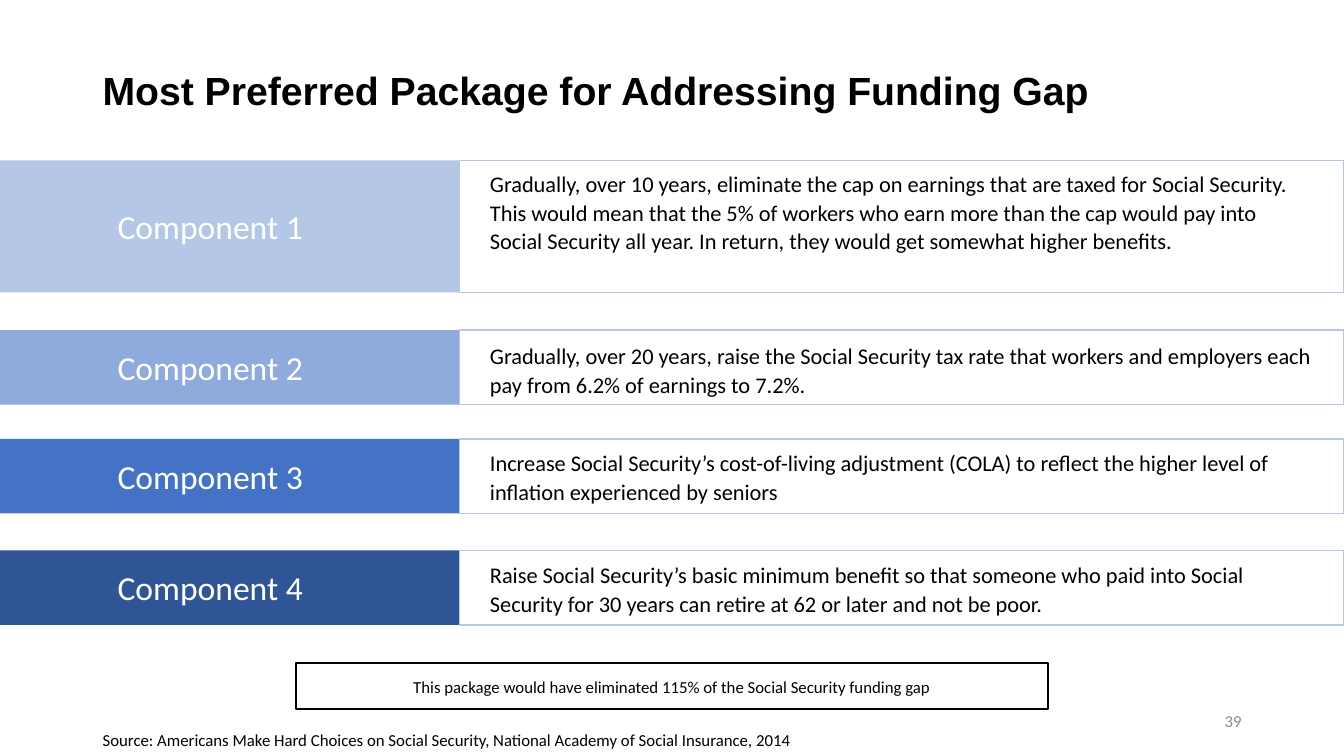
from dataclasses import dataclass

from pptx import Presentation
from pptx.dml.color import RGBColor
from pptx.enum.shapes import MSO_SHAPE
from pptx.enum.text import MSO_ANCHOR, PP_ALIGN
from pptx.util import Pt

RECTANGLE = MSO_SHAPE.RECTANGLE
TOP, MIDDLE = MSO_ANCHOR.TOP, MSO_ANCHOR.MIDDLE
LEFT, CENTER, RIGHT = PP_ALIGN.LEFT, PP_ALIGN.CENTER, PP_ALIGN.RIGHT


@dataclass(frozen=True)
class Theme:
    heading_font: str = "Arial"
    body_font: str = "Calibri"
    ink: str = "000000"
    label: str = "FFFFFF"
    muted: str = "8C8C8C"
    outline: str = "B4C7E7"
    bands: tuple = ("B4C7E7", "8FAADC", "4472C4", "2F5597")
    title_size: int = 28
    label_size: int = 24
    body_size: int = 16
    small_size: int = 12


class SlideBuilder:
    def __init__(self, slide, theme):
        self.slide = slide
        self.theme = theme

    def box(self, left, top, width, height, fill=None, line=None, weight=1):
        rectangle = self.slide.shapes.add_shape(
            RECTANGLE, Pt(left), Pt(top), Pt(width), Pt(height))
        rectangle.shadow.inherit = False
        if fill:
            rectangle.fill.solid()
            rectangle.fill.fore_color.rgb = RGBColor.from_string(fill)
        else:
            rectangle.fill.background()
        if line:
            rectangle.line.color.rgb = RGBColor.from_string(line)
            rectangle.line.width = Pt(weight)
        else:
            rectangle.line.fill.background()

    def text(self, words, left, top, width, height, size, color=None, font=None,
             bold=False, align=LEFT, anchor=TOP, spacing=1.0, after=0):
        frame = self.slide.shapes.add_textbox(
            Pt(left), Pt(top), Pt(width), Pt(height)).text_frame
        frame.word_wrap = True
        frame.vertical_anchor = anchor
        paragraph = frame.paragraphs[0]
        paragraph.alignment = align
        paragraph.line_spacing = spacing
        paragraph.space_after = Pt(after)
        run = paragraph.add_run()
        run.text = words
        run.font.name = font or self.theme.body_font
        run.font.size = Pt(size)
        run.font.bold = bold
        run.font.color.rgb = RGBColor.from_string(color or self.theme.ink)

    def component(self, number, top, height, text_top, text_width, words):
        theme = self.theme
        self.box(0, top, SPLIT, height, fill=theme.bands[number - 1])
        self.box(SPLIT, top, SLIDE_WIDTH - SPLIT, height, line=theme.outline)
        self.text(f"Component {number}", 55.5, top + (height - LABEL_HEIGHT) / 2,
                  189.4, LABEL_HEIGHT, theme.label_size, theme.label, align=CENTER)
        self.text(words, 342.9, text_top, text_width, height - 6,
                  theme.body_size, spacing=1.07, after=8)


SLIDE_WIDTH, SLIDE_HEIGHT = 960, 540
SPLIT = 328.2
LABEL_HEIGHT = 36
COMPONENTS = (
    (114.5, 94.3, 116.6, 602.6,
     "Gradually, over 10 years, eliminate the cap on earnings that are taxed for "
     "Social Security. This would mean that the 5% of workers who earn more than "
     "the cap would pay into Social Security all year. In return, they would get "
     "somewhat higher benefits."),
    (235.8, 53.3, 239.8, 602.6,
     "Gradually, over 20 years, raise the Social Security tax rate that workers "
     "and employers each pay from 6.2% of earnings to 7.2%."),
    (313.5, 53.3, 316.1, 602.6,
     "Increase Social Security’s cost-of-living adjustment (COLA) to reflect the "
     "higher level of inflation experienced by seniors"),
    (393.1, 53.3, 396, 583.2,
     "Raise Social Security’s basic minimum benefit so that someone who paid into "
     "Social Security for 30 years can retire at 62 or later and not be poor."),
)


def main():
    presentation = Presentation()
    presentation.slide_width = Pt(SLIDE_WIDTH)
    presentation.slide_height = Pt(SLIDE_HEIGHT)
    theme = Theme()
    builder = SlideBuilder(
        presentation.slides.add_slide(presentation.slide_layouts[6]), theme)

    builder.text("Most Preferred Package for Addressing Funding Gap",
                 66.2, 43.2, 774.7, 46.8, theme.title_size,
                 font=theme.heading_font, bold=True, anchor=MIDDLE, spacing=0.9)
    for number, component in enumerate(COMPONENTS, start=1):
        builder.component(number, *component)
    builder.box(211.5, 473.8, 537, 32.6, line=theme.ink, weight=1.5)
    builder.text("This package would have eliminated 115% of the Social Security funding gap",
                 152.4, 478.8, 655.2, 21.8, theme.small_size,
                 align=CENTER, spacing=1.07, after=8)
    builder.text("39", 678, 500.5, 216, 28.8, theme.small_size, theme.muted,
                 align=RIGHT, anchor=MIDDLE)
    builder.text("Source: Americans Make Hard Choices on Social Security, "
                 "National Academy of Social Insurance, 2014",
                 66.2, 517.9, 617.8, 21.8, theme.small_size)
    presentation.save("out.pptx")


if __name__ == "__main__":
    main()
